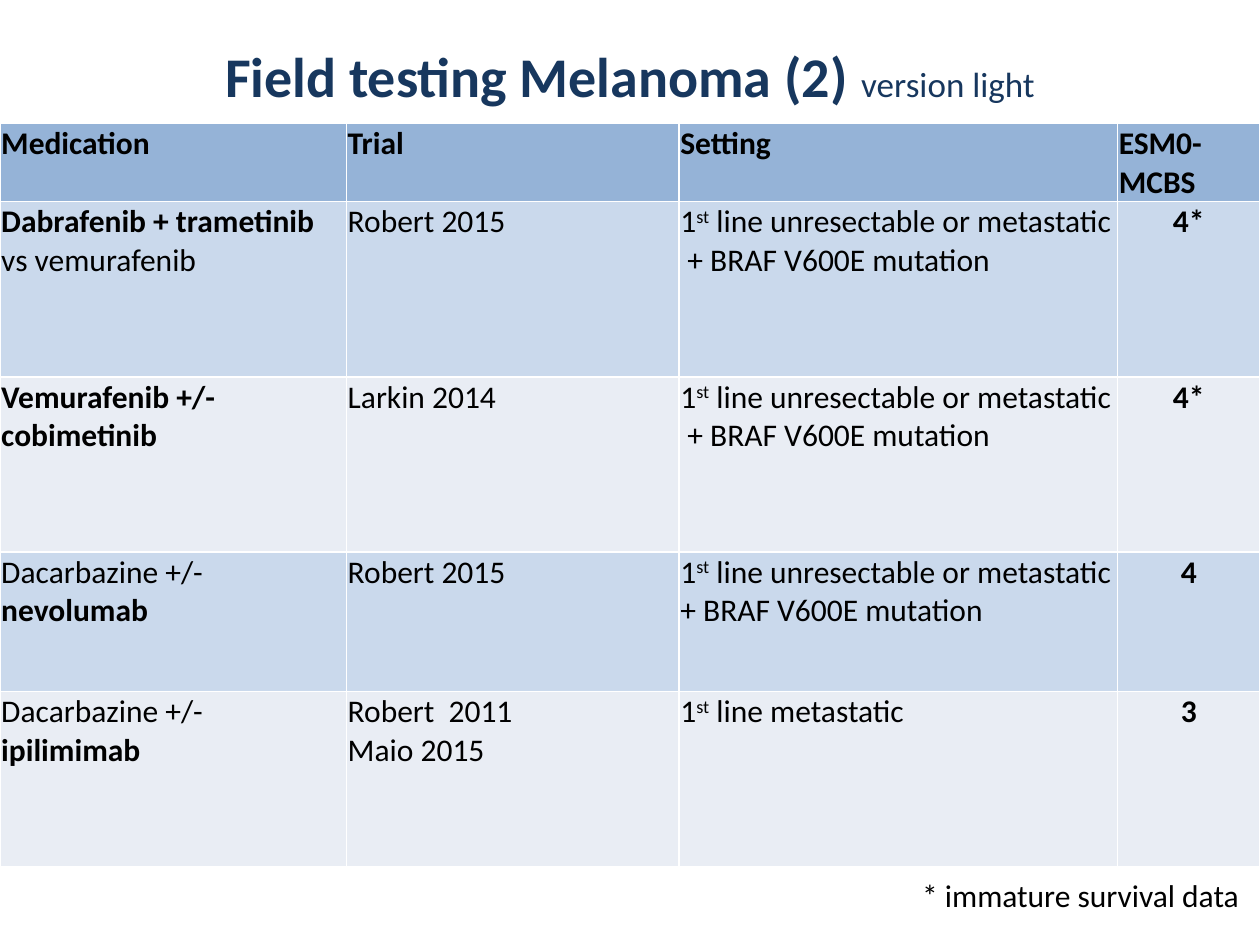
from lxml import etree
from pptx import Presentation
from pptx.dml.color import RGBColor
from pptx.enum import text
from pptx.oxml.ns import qn
from pptx.util import Inches, Pt

FONT = "Calibri"
NAVY = RGBColor(0x17, 0x37, 0x5E)
BLACK = RGBColor(0, 0, 0)
HEADER = RGBColor(0x95, 0xB3, 0xD7)
BANDS = [RGBColor(0xCA, 0xD9, 0xEC), RGBColor(0xE9, 0xED, 0xF4)]

COLS = [2.75, 2.64, 3.48, 1.13]
ROWS = [0.57, 1.39, 1.39, 1.11, 1.39]

# A cell is a list of paragraphs, a paragraph a list of (text, style) runs
B, N, SUP = "bold", "normal", "superscript"
FIRST_LINE = [("1", N), ("st", SUP), (" line unresectable or metastatic", N)]
HEADINGS = ["Medication", "Trial", "Setting", "ESM0-MCBS"]
TRIALS = [
    [[[("Dabrafenib + trametinib ", B), ("vs vemurafenib", N)]],
     [[("Robert 2015", N)]],
     [FIRST_LINE, [(" + BRAF V600E mutation", N)]],
     [[("4*", B)]]],
    [[[("Vemurafenib +/- cobimetinib", B)]],
     [[("Larkin 2014", N)]],
     [FIRST_LINE, [(" + BRAF V600E mutation", N)]],
     [[("4*", B)]]],
    [[[("Dacarbazine +/- ", N), ("nevolumab", B)]],
     [[("Robert 2015", N)]],
     [FIRST_LINE, [("+ BRAF V600E mutation", N)]],
     [[("4", B)]]],
    [[[("Dacarbazine +/- ", N), ("ipilimimab", B)]],
     [[("Robert  2011", N)], [("Maio 2015", N)]],
     [[("1", N), ("st", SUP), (" line metastatic", N)]],
     [[("3", B)]]],
]


def add_run(p, words, style=N, size=18, color=BLACK):
    r = p.add_run()
    r.text = words
    r.font.name, r.font.size = FONT, Pt(size)
    r.font.bold = style == B
    r.font.color.rgb = color
    if style == SUP:
        r._r.get_or_add_rPr().set("baseline", "30000")


def set_borders(cell):
    tcPr = cell._tc.get_or_add_tcPr()
    for i, side in enumerate(("lnL", "lnR", "lnT", "lnB")):
        ln = etree.Element(qn("a:" + side), w=str(Pt(1)))
        fill = etree.SubElement(ln, qn("a:solidFill"))
        etree.SubElement(fill, qn("a:srgbClr"), val="FFFFFF")
        tcPr.insert(i, ln)


def fill_cell(cell, paragraphs, color, align):
    cell.margin_left = cell.margin_right = cell.margin_top = Inches(0.01)
    cell.margin_bottom = 0
    cell.fill.solid()
    cell.fill.fore_color.rgb = color
    set_borders(cell)
    tf = cell.text_frame
    for i, runs in enumerate(paragraphs):
        p = tf.paragraphs[0] if i == 0 else tf.add_paragraph()
        p.alignment = align
        for words, style in runs:
            add_run(p, words, style)


def add_title(s):
    sp = s.shapes.title
    sp.left, sp.top = Inches(0.5), Inches(-0.03)
    sp.width, sp.height = Inches(9), Inches(1.25)
    tf = sp.text_frame
    tf.vertical_anchor = text.MSO_ANCHOR.MIDDLE
    p = tf.paragraphs[0]
    p.alignment = text.PP_ALIGN.CENTER
    add_run(p, "Field testing Melanoma (2) ", B, 32, NAVY)
    add_run(p, "version light", N, 20, NAVY)


def add_trial_table(s):
    table = s.shapes.add_table(len(ROWS), len(COLS), 0, Inches(0.98),
                               Inches(sum(COLS)), Inches(sum(ROWS))).table
    for col, width in zip(table.columns, COLS):
        col.width = Inches(width)
    for row, height in zip(table.rows, ROWS):
        row.height = Inches(height)
    header = [[[(heading, B)]] for heading in HEADINGS]
    for i, row in enumerate([header] + TRIALS):
        color = BANDS[(i - 1) % 2] if i else HEADER
        for j, paragraphs in enumerate(row):
            score = i > 0 and j == len(COLS) - 1
            align = text.PP_ALIGN.CENTER if score else text.PP_ALIGN.LEFT
            fill_cell(table.cell(i, j), paragraphs, color, align)


def add_footnote(s):
    sp = s.shapes.add_textbox(Inches(7.22), Inches(6.9), Inches(2.75), Inches(0.4))
    tf = sp.text_frame
    tf.word_wrap = False
    tf.auto_size = text.MSO_AUTO_SIZE.SHAPE_TO_FIT_TEXT
    add_run(tf.paragraphs[0], "* immature survival data")


def main():
    prs = Presentation()
    prs.slide_width, prs.slide_height = Inches(10), Inches(7.5)
    s = prs.slides.add_slide(prs.slide_layouts[5])  # title only
    add_title(s)
    add_trial_table(s)
    add_footnote(s)
    prs.save("out.pptx")


if __name__ == "__main__":
    main()
